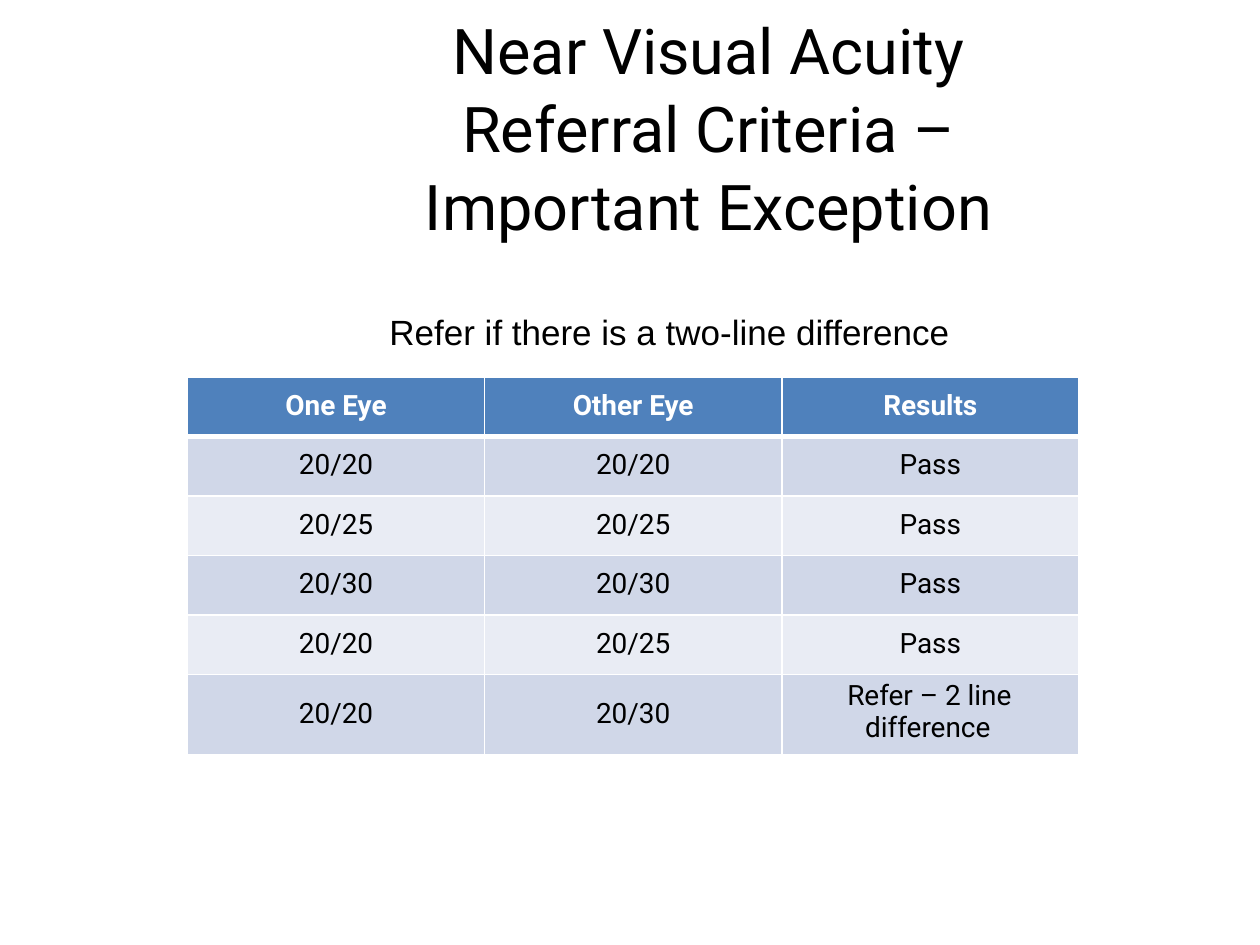
from lxml.etree import SubElement
from pptx import Presentation
from pptx.dml.color import RGBColor
from pptx.enum.text import MSO_ANCHOR, MSO_AUTO_SIZE, PP_ALIGN
from pptx.oxml.ns import qn
from pptx.util import Cm, Pt

BLACK = RGBColor(0x00, 0x00, 0x00)
WHITE = RGBColor(0xFF, 0xFF, 0xFF)
HEADER = RGBColor(0x4F, 0x81, 0xBC)
DARK_BAND = RGBColor(0xD0, 0xD7, 0xE8)
LIGHT_BAND = RGBColor(0xE9, 0xEC, 0xF4)

ROWS = [
    ("One Eye", "Other Eye", "Results"),
    ("20/20", "20/20", "Pass"),
    ("20/25", "20/25", "Pass"),
    ("20/30", "20/30", "Pass"),
    ("20/20", "20/25", "Pass"),
    ("20/20", "20/30", "Refer – 2 line difference"),
]
LAST = len(ROWS) - 1


def write(tf, text, name, size, color, bold=False, align=PP_ALIGN.CENTER):
    p = tf.paragraphs[0]
    p.alignment = align
    r = p.add_run()
    r.text = text
    for key, value in {"name": name, "size": Pt(size), "bold": bold}.items():
        setattr(r.font, key, value)
    r.font.color.rgb = color
    return p


def add_border(cell, side, width):
    ln = SubElement(cell._tc.get_or_add_tcPr(), qn(f"a:ln{side}"), w=str(Pt(width)))
    fill = SubElement(ln, qn("a:solidFill"))
    SubElement(fill, qn("a:srgbClr"), val=str(WHITE))


prs = Presentation()
prs.slide_width, prs.slide_height = Cm(25.4), Cm(19.05)
s = prs.slides.add_slide(prs.slide_layouts[5])

title = s.shapes.title
title.left, title.top, title.width, title.height = Cm(8.43), Cm(0.13), Cm(11.71), Cm(4.65)
p = write(title.text_frame, "Near Visual Acuity Referral Criteria – Important Exception",
          "Roboto", 36, BLACK)
p.line_spacing = 1.03

table = s.shapes.add_table(len(ROWS), 3, Cm(3.78), Cm(7.6), Cm(17.97), Cm(7.61)).table
for col in table.columns:
    col.width = Cm(5.99)
for i, values in enumerate(ROWS):
    table.rows[i].height = Cm(1.61 if i == LAST else 1.2)
    band = HEADER if i == 0 else DARK_BAND if i % 2 else LIGHT_BAND
    for j, text in enumerate(values):
        cell = table.cell(i, j)
        wrapped = i == LAST and j == 2
        top = 0.1 if wrapped else 0.46 if i == LAST else 0.25
        margins = {"margin_left": 0, "margin_top": Cm(top), "margin_right": 0, "margin_bottom": 0}
        for key, value in margins.items():
            setattr(cell, key, value)
        widths = {"L": 1, "R": 1, "T": 3 if i == 1 else 1, "B": 3 if i == 0 else 1}
        for side, width in widths.items():
            add_border(cell, side, width)
        cell.fill.solid()
        cell.fill.fore_color.rgb = band
        p = write(cell.text_frame, text, "Roboto", 16, WHITE if i == 0 else BLACK, bold=i == 0,
                  align=PP_ALIGN.LEFT if wrapped else PP_ALIGN.CENTER)
        if wrapped:
            pPr = p._p.get_or_add_pPr()
            for key, value in {"marL": Cm(1.68), "marR": Cm(1.2), "indent": Cm(-0.36)}.items():
                pPr.set(key, str(value))

note = s.shapes.add_textbox(Cm(7.85), Cm(6.2), Cm(11.35), Cm(0.91))
write(note.text_frame, "Refer if there is a two-line difference", "Arial", 20, BLACK,
      align=PP_ALIGN.LEFT)

frame = {
    "margin_left": 0, "margin_top": Cm(0.06), "margin_right": 0, "margin_bottom": 0,
    "word_wrap": True, "auto_size": MSO_AUTO_SIZE.NONE, "vertical_anchor": MSO_ANCHOR.TOP,
}
for sp in (title, note):
    for key, value in frame.items():
        setattr(sp.text_frame, key, value)

prs.save("out.pptx")
